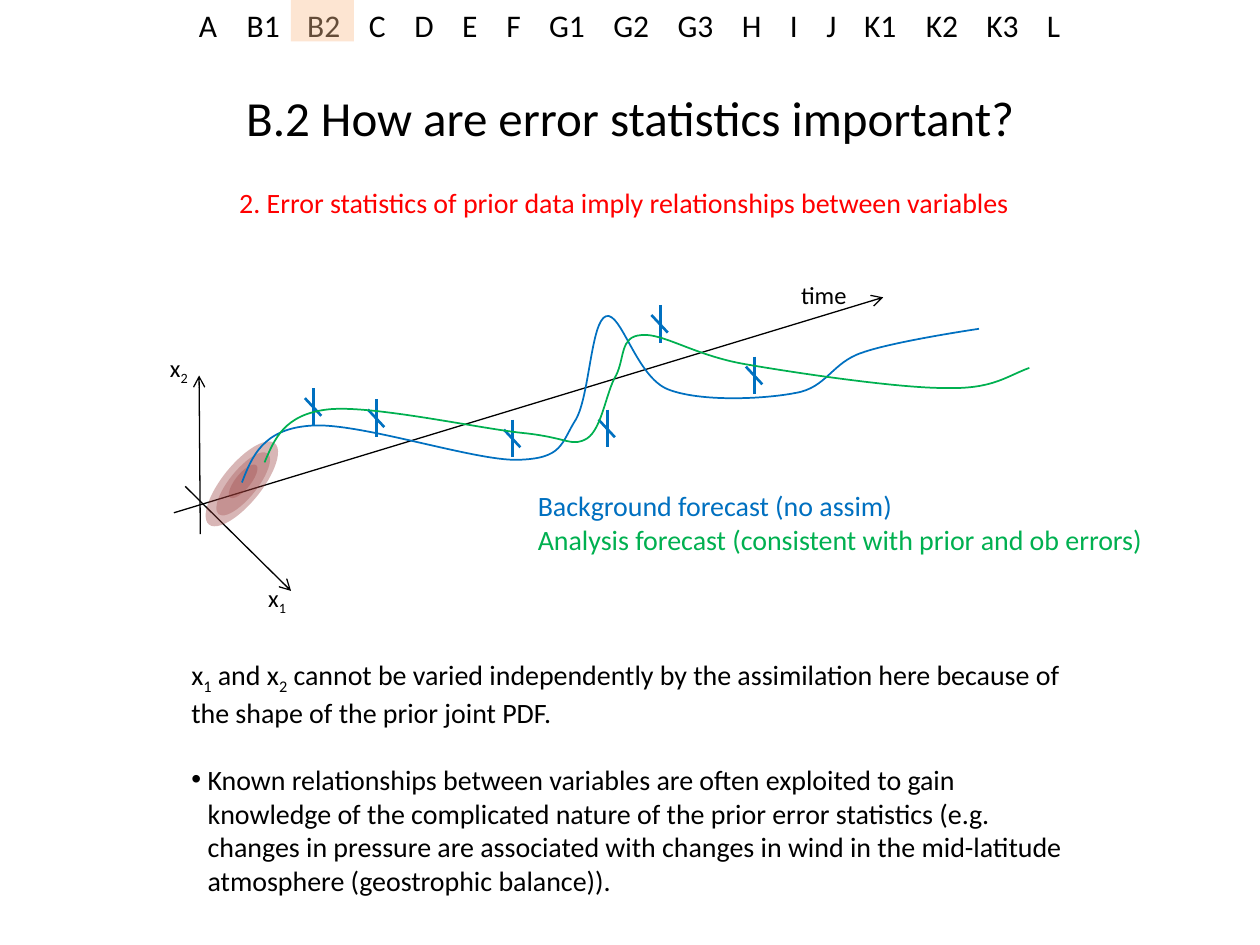
from dataclasses import dataclass

import pptx
import pptx.dml.color
import pptx.enum.shapes
import pptx.enum.text
import pptx.oxml
import pptx.oxml.ns
import pptx.util
from pptx.util import Inches


@dataclass(frozen=True)
class Theme:
    font: str = "Calibri"
    black: str = "000000"
    red: str = "FF0000"
    blue: str = "0070C0"
    green: str = "00B050"
    density: str = "953735"
    highlight: str = "FAC090"
    title: int = 28
    menu: int = 18
    body: int = 16
    label: int = 14


@dataclass(frozen=True)
class Span:
    text: str
    subscript: bool = False


@dataclass(frozen=True)
class Label:
    spans: tuple
    box: tuple
    size: int
    color: str = Theme.black
    wrap: bool = True
    centred: bool = False


@dataclass(frozen=True)
class Curve:
    color: str
    start: tuple
    segments: tuple  # two control points and an end point each


THEME = Theme()
MENU = "A B1 B2 C D E F G1 G2 G3 H I J K1 K2 K3 L".split()
MENU_STOPS = (0.38, 0.86, 1.35, 1.71, 2.09, 2.44, 2.78, 3.29, 3.8,
              4.31, 4.69, 4.98, 5.28, 5.77, 6.25, 6.73)
LABELS = (
    Label((Span("B.2 How are error statistics important?"),),
          (0.5, 0.3, 9, 1.25), THEME.title, centred=True),
    Label((Span("2. Error statistics of prior data imply relationships between variables"),),
          (1.8, 1.42, 6.39, 0.37), THEME.body, THEME.red, wrap=False),
    Label((Span("x"), Span("1", True)), (2.03, 4.58, 0.47, 0.34), THEME.label),
    Label((Span("x"), Span("2", True)), (1.25, 2.75, 0.47, 0.34), THEME.label),
    Label((Span("time"),), (6.26, 2.17, 0.57, 0.34), THEME.label, wrap=False),
)
AXES = (((1.59, 4.24), (1.58, 2.98)),
        ((1.47, 3.86), (2.31, 4.69)),
        ((1.38, 4.07), (7.01, 2.36)))
# Centre, size and opacity of each density contour
CONTOURS = (((1.92, 3.84), (0.83, 0.31), 36),
            ((1.93, 3.84), (0.62, 0.22), 28),
            ((1.93, 3.82), (0.33, 0.12), 28))
# Top of each observation mark
OBSERVATIONS = ((2.49, 3.08), (5.99, 2.83), (5.24, 2.42),
                (4.07, 3.33), (4.82, 3.25), (2.99, 3.17))
BACKGROUND = Curve(THEME.blue, (1.92, 3.83), (
    ((2, 3.62), (2.09, 3.41), (2.45, 3.38)),
    ((2.82, 3.34), (3.76, 3.66), (4.11, 3.65)),
    ((4.47, 3.64), (4.45, 3.52), (4.57, 3.33)),
    ((4.68, 3.14), (4.69, 2.55), (4.81, 2.51)),
    ((4.93, 2.47), (5.05, 2.99), (5.3, 3.09)),
    ((5.55, 3.19), (6.05, 3.17), (6.31, 3.12)),
    ((6.56, 3.08), (6.6, 2.88), (6.84, 2.8)),
    ((7.09, 2.71), (7.77, 2.61), (7.77, 2.61))))
ANALYSIS = Curve(THEME.green, (2.1, 3.67), (
    ((2.18, 3.48), (2.26, 3.29), (2.6, 3.25)),
    ((2.95, 3.21), (3.84, 3.41), (4.18, 3.44)),
    ((4.52, 3.48), (4.54, 3.55), (4.66, 3.48)),
    ((4.78, 3.4), (4.81, 3.11), (4.89, 2.98)),
    ((4.96, 2.84), (4.92, 2.67), (5.09, 2.66)),
    ((5.26, 2.64), (5.51, 2.82), (5.91, 2.89)),
    ((6.31, 2.96), (7.12, 3.08), (7.5, 3.08)),
    ((7.88, 3.09), (7.98, 2.99), (8.17, 2.92))))


def rgb(color: str):
    return pptx.dml.color.RGBColor.from_string(color)


def add_child(parent, tag: str, **attributes):
    element = parent.makeelement(pptx.oxml.ns.qn(tag), attributes)
    parent.append(element)
    return element


def add_box(page, bounds: tuple, wrap: bool = True):
    frame = page.shapes.add_textbox(*map(Inches, bounds)).text_frame
    frame.word_wrap = wrap
    return frame


def write(para, spans: tuple, size: int, color: str) -> None:
    for span in spans:
        run = para.add_run()
        run.text = span.text
        formats = {"name": THEME.font, "size": pptx.util.Pt(size)}
        for name, value in formats.items():
            setattr(run.font, name, value)
        run.font.color.rgb = rgb(color)
        if span.subscript:
            run.font._element.set("baseline", "-25000")


def add_label(page, label: Label) -> None:
    frame = add_box(page, label.box, label.wrap)
    if label.centred:
        frame.vertical_anchor = pptx.enum.text.MSO_ANCHOR.MIDDLE
        frame.paragraphs[0].alignment = pptx.enum.text.PP_ALIGN.CENTER
    else:
        frame.auto_size = pptx.enum.text.MSO_AUTO_SIZE.SHAPE_TO_FIT_TEXT
    write(frame.paragraphs[0], label.spans, label.size, label.color)


def add_menu(page) -> None:
    para = add_box(page, (1.48, 0, 7.1, 0.4)).paragraphs[0]
    stops = add_child(para._p.get_or_add_pPr(), "a:tabLst")
    for stop in MENU_STOPS:
        add_child(stops, "a:tab", pos=str(Inches(stop)), algn="l")
    write(para, (Span("\t".join(MENU)),), THEME.menu, THEME.black)


def add_line(page, start: tuple, end: tuple, color: str, width: float,
             arrow: bool = False) -> None:
    line = page.shapes.add_connector(pptx.enum.shapes.MSO_CONNECTOR.STRAIGHT,
                                     *map(Inches, start + end))
    line.line.color.rgb = rgb(color)
    line.line.width = pptx.util.Pt(width)
    if arrow:
        add_child(line.line._get_or_add_ln(), "a:tailEnd", type="arrow")
    add_child(line._element.spPr, "a:effectLst")


def add_tint(page, kind, bounds: tuple, color: str, opacity: int, rotation: float = 0) -> None:
    shape = page.shapes.add_shape(kind, *map(Inches, bounds))
    shape.shadow.inherit = False
    shape.rotation = rotation
    shape.fill.solid()
    shape.fill.fore_color.rgb = rgb(color)
    shape.line.fill.background()
    fill = shape._element.spPr.find(".//" + pptx.oxml.ns.qn("a:srgbClr"))
    add_child(fill, "a:alpha", val=str(opacity * 1000))


def add_curve(page, curve: Curve) -> None:
    builder = page.shapes.build_freeform(*map(Inches, curve.start))
    builder.add_line_segments([tuple(map(Inches, point))
                               for segment in curve.segments for point in segment], close=False)
    shape = builder.convert_to_shape()
    # Turn each three line points into one cubic segment
    outline = shape._element.spPr.find(".//" + pptx.oxml.ns.qn("a:path"))
    steps = outline.findall(pptx.oxml.ns.qn("a:lnTo"))
    for index, step in enumerate(steps):
        if index % 3 == 0:
            cubic = add_child(outline, "a:cubicBezTo")
        cubic.append(step[0])
        outline.remove(step)
    shape.shadow.inherit = False
    shape.fill.background()
    shape.line.color.rgb = rgb(curve.color)
    shape.line.width = pptx.util.Pt(1)


def add_conclusions(page) -> None:
    frame = add_box(page, (1.42, 5.17, 7.17, 1.99))
    write(frame.paragraphs[0], (
        Span("x"), Span("1", True), Span(" and x"), Span("2", True),
        Span(" cannot be varied independently by the assimilation here because of "
             "the shape of the prior joint PDF.")), THEME.body, THEME.black)
    para = frame.add_paragraph()
    para.space_before = pptx.util.Pt(19)
    layout = para._p.get_or_add_pPr()
    layout.set("marL", str(Inches(0.13)))
    layout.set("indent", str(Inches(-0.13)))
    add_child(layout, "a:buFont", typeface="Arial")
    add_child(layout, "a:buChar", char="•")
    write(para, (Span(
        "Known relationships between variables are often exploited to gain knowledge of the "
        "complicated nature of the prior error statistics (e.g. changes in pressure are "
        "associated with changes in wind in the mid-latitude atmosphere "
        "(geostrophic balance))."),), THEME.body, THEME.black)


def main() -> None:
    deck = pptx.Presentation()
    deck.slide_width, deck.slide_height = Inches(10), Inches(7.5)
    page = deck.slides.add_slide(deck.slide_layouts[6])
    shapes = pptx.enum.shapes.MSO_SHAPE

    # Section menu, title and labels
    add_menu(page)
    for label in LABELS:
        add_label(page, label)

    # Axes and prior density
    for start, end in AXES:
        add_line(page, start, end, THEME.black, 0.75, arrow=True)
    density = page.shapes.add_group_shape()
    for (x, y), (width, height), opacity in CONTOURS:
        add_tint(density, shapes.OVAL, (x - width / 2, y - height / 2, width, height),
                 THEME.density, opacity, rotation=-51)

    # Observations and forecasts
    for x, y in OBSERVATIONS:
        mark = page.shapes.add_group_shape()
        add_line(mark, (x, y), (x, y + 0.3), THEME.blue, 1.5)
        add_line(mark, (x + 0.06, y + 0.22), (x - 0.07, y + 0.08), THEME.blue, 1.5)
    for curve in (BACKGROUND, ANALYSIS):
        add_curve(page, curve)

    # Legend and conclusions
    legend = add_box(page, (4.17, 3.83, 5.22, 0.64), wrap=False)
    write(legend.paragraphs[0], (Span("Background forecast (no assim)"),),
          THEME.body, THEME.blue)
    write(legend.add_paragraph(),
          (Span("Analysis forecast (consistent with prior and ob errors)"),),
          THEME.body, THEME.green)
    add_conclusions(page)

    # Current section
    add_tint(page, shapes.RECTANGLE, (2.31, 0, 0.5, 0.33), THEME.highlight, 40)
    deck.save("out.pptx")


if __name__ == "__main__":
    main()
